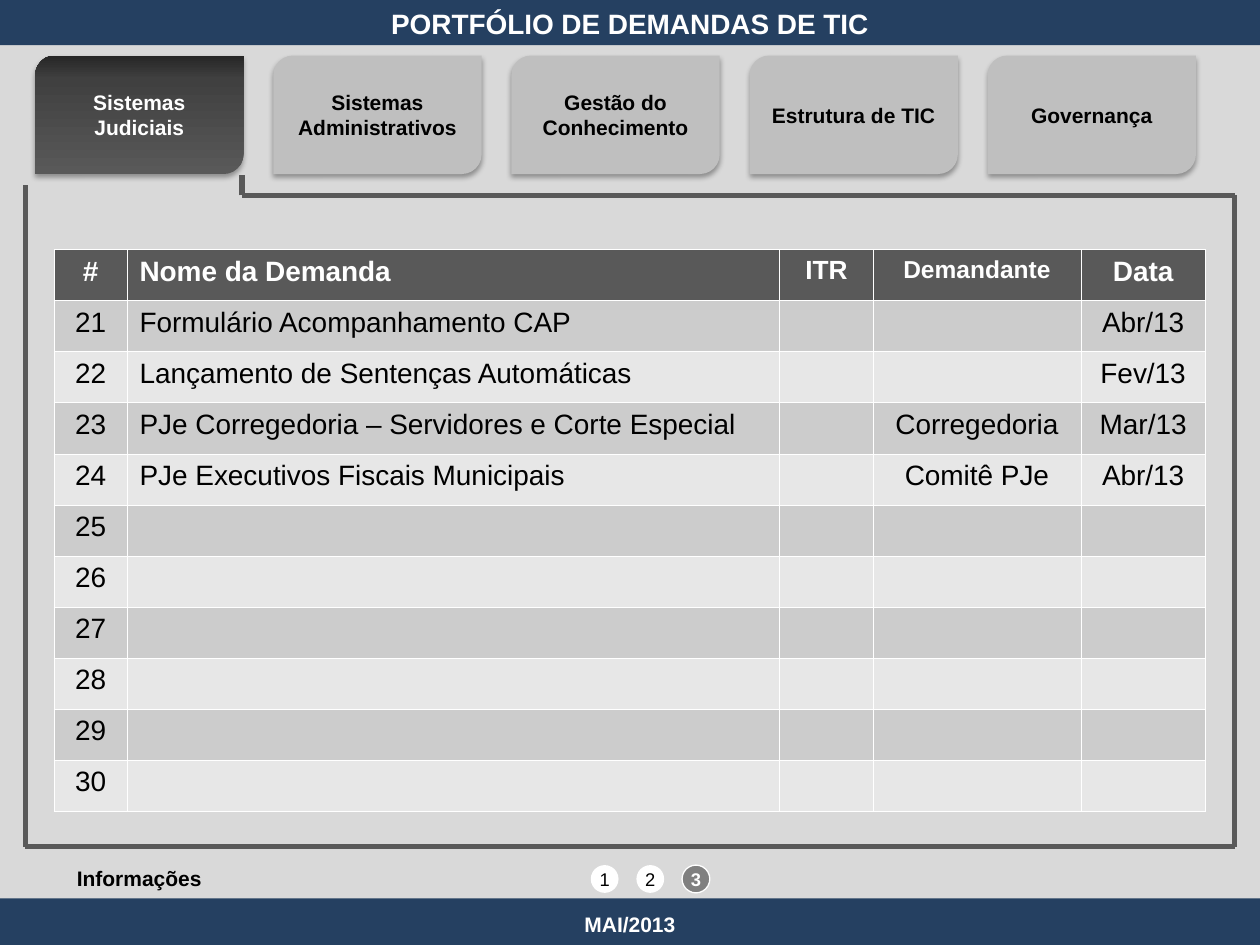
"""Build the slide listing the judicial systems demands of an IT portfolio."""
from copy import deepcopy
from dataclasses import dataclass

from lxml.etree import SubElement
from pptx import Presentation
from pptx.dml.color import RGBColor
from pptx.enum.shapes import MSO_CONNECTOR, MSO_SHAPE
from pptx.enum.text import MSO_ANCHOR as Anchor, MSO_AUTO_SIZE, PP_ALIGN as Align
from pptx.oxml.ns import qn
from pptx.util import Cm, Pt

NAVY, CANVAS, DARK, TAB_GRAY = "254061", "D9D9D9", "595959", "BFBFBF"
WHITE, BLACK = "FFFFFF", "000000"
WIDTH, HEIGHT = 25.4, 19.05


@dataclass
class Box:
    left: float
    top: float
    width: float
    height: float

    def lengths(self) -> tuple:
        return Cm(self.left), Cm(self.top), Cm(self.width), Cm(self.height)


@dataclass
class Style:
    size: float
    color: str = BLACK
    bold: bool = False
    align: Align = Align.CENTER


@dataclass
class Column:
    heading: str
    width: float
    heading_size: float = 16
    align: Align = Align.CENTER


TABS = ["Sistemas Judiciais", "Sistemas Administrativos", "Gestão do Conhecimento",
        "Estrutura de TIC", "Governança"]
FRAME = [(0.51, 3.73), (0.51, 17.07), (24.89, 17.07), (24.89, 3.94), (4.88, 3.94), (4.88, 3.53)]
COLUMNS = [
    Column("#", 1.47),
    Column("Nome da Demanda", 13.16, align=Align.LEFT),
    Column("ITR", 1.88, 15),
    Column("Demandante", 4.19, 14),
    Column("Data", 2.51),
]
DEMANDS = [
    ("Formulário Acompanhamento CAP", "", "", "Abr/13"),
    ("Lançamento de Sentenças Automáticas", "", "", "Fev/13"),
    ("PJe Corregedoria – Servidores e Corte Especial", "", "Corregedoria", "Mar/13"),
    ("PJe Executivos Fiscais Municipais", "", "Comitê PJe", "Abr/13"),
]
FIRST_NUMBER, ROWS_PER_PAGE, ROW_HEIGHT = 21, 10, 1.03


def rgb(color: str) -> RGBColor:
    return RGBColor.from_string(color)


def write(frame, text: str, style: Style) -> None:
    paragraph = frame.paragraphs[0]
    paragraph.text = text
    paragraph.alignment = style.align
    font = paragraph.font
    font.name, font.size, font.bold = "Arial", Pt(style.size), style.bold
    font.color.rgb = rgb(style.color)


def add_shape(slide, kind: MSO_SHAPE, box: Box, fill: str):
    shape = slide.shapes.add_shape(kind, *box.lengths())
    shape.shadow.inherit = False
    shape.fill.solid()
    shape.fill.fore_color.rgb = rgb(fill)
    shape.line.fill.background()
    return shape


def add_label(slide, box: Box, text: str, style: Style) -> None:
    frame = slide.shapes.add_textbox(*box.lengths()).text_frame
    frame.word_wrap = True
    frame.vertical_anchor = Anchor.MIDDLE
    write(frame, text, style)


def add_title(slide, text: str) -> None:
    title = slide.shapes.title
    title.left, title.top, title.width, title.height = Box(0, 0, WIDTH, 0.94).lengths()
    frame = title.text_frame
    frame.auto_size = MSO_AUTO_SIZE.NONE
    frame.vertical_anchor = Anchor.TOP
    write(frame, text, Style(16, WHITE, True))
    slide.shapes._spTree.append(title._element)


def cast_shadow(shape) -> None:
    effects = shape._element.spPr.find(qn("a:effectLst"))
    shadow = SubElement(effects, qn("a:outerShdw"), blurRad=str(Pt(3.1)), dist=str(Pt(1.8)),
                        dir="5400000", rotWithShape="0")
    color = SubElement(shadow, qn("a:srgbClr"), val=BLACK)
    SubElement(color, qn("a:alpha"), val="35000")


def fill_gradient(shape, colors: dict[float, str]) -> None:
    shape.fill.gradient()
    shape.fill.gradient_angle = 90
    stop_list = shape._element.spPr.find(qn("a:gradFill")).find(qn("a:gsLst"))
    stop_list.insert(1, deepcopy(stop_list[0]))
    for stop, (position, color) in zip(shape.fill.gradient_stops, colors.items()):
        stop.position = position
        stop.color.rgb = rgb(color)


def add_tab(slide, index: int, text: str, active: bool) -> None:
    box = Box(0.71 + 4.8 * index, 1.12, 4.2, 2.39)
    tab = add_shape(slide, MSO_SHAPE.ROUND_2_DIAG_RECTANGLE, box, TAB_GRAY)
    cast_shadow(tab)
    if active:
        fill_gradient(tab, {0: DARK, 0.8: "404040", 1: "262626"})
    tab.text_frame.vertical_anchor = Anchor.MIDDLE
    write(tab.text_frame, text, Style(12, WHITE if active else BLACK, True))


def add_line(slide, start: tuple, end: tuple) -> None:
    line = slide.shapes.add_connector(MSO_CONNECTOR.STRAIGHT, *map(Cm, start + end))
    line.line.color.rgb = rgb(DARK)
    line.line.width = Pt(3)
    SubElement(line._element.spPr, qn("a:effectLst"))


def add_page_dot(slide, index: int, active: bool) -> None:
    box = Box(11.91 + 0.92 * index, 17.44, 0.56, 0.56)
    dot = add_shape(slide, MSO_SHAPE.OVAL, box, "808080" if active else WHITE)
    if active:
        dot.line.color.rgb = rgb(WHITE)
        dot.line.width = Pt(0.75)
    frame = dot.text_frame
    frame.word_wrap = False
    frame.vertical_anchor = Anchor.MIDDLE
    write(frame, str(index + 1), Style(10.5, WHITE if active else BLACK, active))


def format_cell(cell, text: str, style: Style, fill: str) -> None:
    properties = cell._tc.get_or_add_tcPr()
    for side in ("a:lnL", "a:lnR", "a:lnT", "a:lnB"):
        border = SubElement(properties, qn(side), w=str(Pt(0.5)))
        SubElement(SubElement(border, qn("a:solidFill")), qn("a:srgbClr"), val=WHITE)
    cell.fill.solid()
    cell.fill.fore_color.rgb = rgb(fill)
    write(cell.text_frame, text, style)


def add_demand_table(slide) -> None:
    blank_rows = [("",) * 4] * (ROWS_PER_PAGE - len(DEMANDS))
    rows = [(str(number), *demand)
            for number, demand in enumerate(DEMANDS + blank_rows, FIRST_NUMBER)]
    box = Box(1.09, 5.03, sum(column.width for column in COLUMNS), ROW_HEIGHT * (len(rows) + 1))
    table = slide.shapes.add_table(len(rows) + 1, len(COLUMNS), *box.lengths()).table
    for row in table.rows:
        row.height = Cm(ROW_HEIGHT)
    for index, column in enumerate(COLUMNS):
        table.columns[index].width = Cm(column.width)
        heading_style = Style(column.heading_size, WHITE, True, column.align)
        format_cell(table.cell(0, index), column.heading, heading_style, DARK)
        for number, row in enumerate(rows, 1):
            fill = "CCCCCC" if number % 2 else "E7E7E7"
            format_cell(table.cell(number, index), row[index], Style(16, align=column.align), fill)


def main() -> None:
    presentation = Presentation()
    presentation.slide_width, presentation.slide_height = Cm(WIDTH), Cm(HEIGHT)
    slide = presentation.slides.add_slide(presentation.slide_layouts[5])
    for top, height, color in ((0.91, 17.4, CANVAS), (18.11, 0.94, NAVY), (-0.03, 0.94, NAVY)):
        add_shape(slide, MSO_SHAPE.RECTANGLE, Box(0, top, WIDTH, height), color)
    add_label(slide, Box(0, 18.14, WIDTH, 0.99), "MAI/2013", Style(12, WHITE, True))
    for index, text in enumerate(TABS):
        add_tab(slide, index, text, active=index == 0)
    for start, end in zip(FRAME, FRAME[1:]):
        add_line(slide, start, end)
    add_title(slide, "PORTFÓLIO DE DEMANDAS DE TIC")
    add_label(slide, Box(1.3, 17.32, 3.2, 0.76), "Informações", Style(12, bold=True, align=Align.LEFT))
    add_demand_table(slide)
    for index in range(3):
        add_page_dot(slide, index, active=index == 2)
    presentation.save("out.pptx")


if __name__ == "__main__":
    main()
